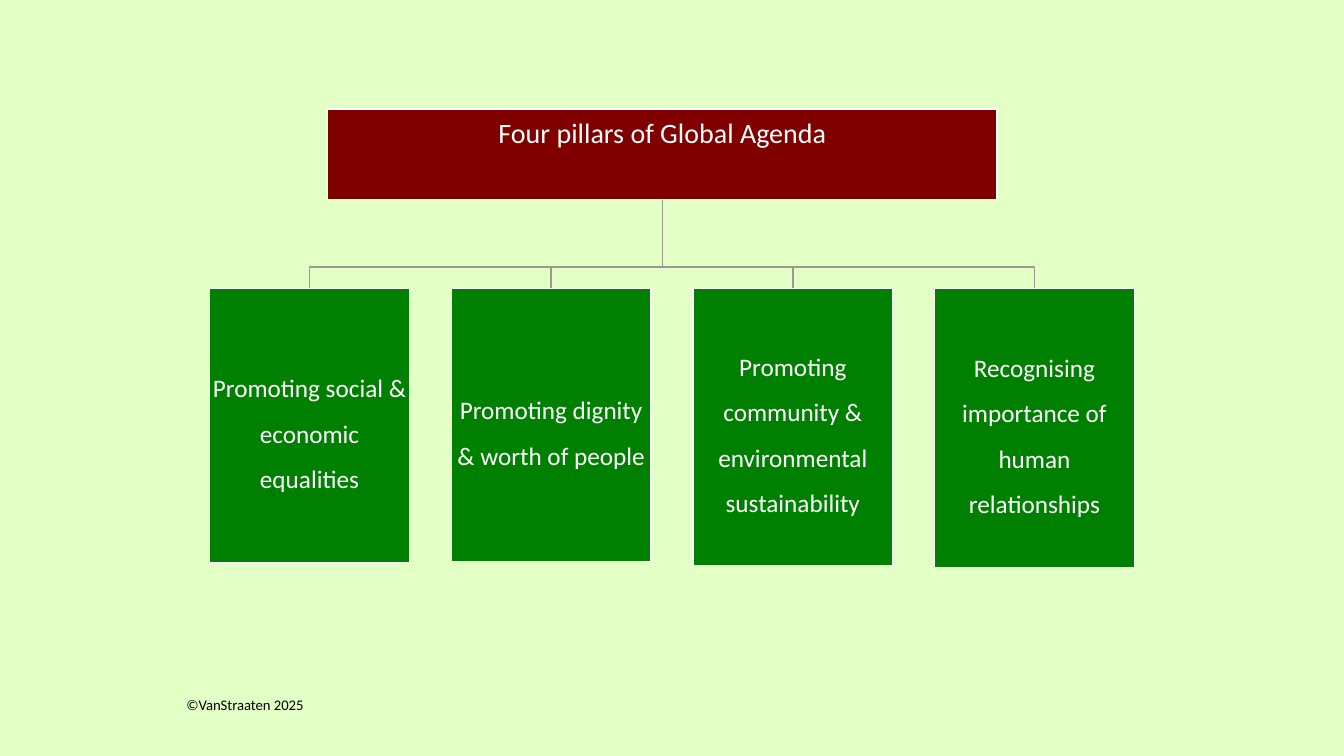
"""Build a slide showing the four pillars of the Global Agenda as a tree."""
import pptx
import pptx.dml.color
import pptx.enum.text
import pptx.util

Inches = pptx.util.Inches
Pt = pptx.util.Pt
RGBColor = pptx.dml.color.RGBColor
PP_ALIGN = pptx.enum.text.PP_ALIGN
MSO_ANCHOR = pptx.enum.text.MSO_ANCHOR

MINT = RGBColor(0xE2, 0xFF, 0xC6)
MAROON = RGBColor(0x80, 0x00, 0x00)
GREEN = RGBColor(0x00, 0x80, 0x00)
TAUPE = RGBColor(0xA0, 0x98, 0x8C)
WHITE = RGBColor(0xFF, 0xFF, 0xFF)
BLACK = RGBColor(0x00, 0x00, 0x00)

PILLARS = [
    ("Promoting social & economic equalities", 2.72),
    ("Promoting dignity & worth of people", 2.71),
    ("Promoting community & environmental sustainability", 2.75),
    ("Recognising importance of human relationships", 2.77),
]
LEFT, TOP, WIDTH = 2.08, 2.86, 1.98
PITCH = (9.27 - LEFT) / 3
TRUNK_X, TRUNK_TOP, BRANCH_Y = 6.57, 1.98, 2.65


def set_text(sp, text, size, color, align, spacing):
    tf = sp.text_frame
    tf.text = text
    tf.word_wrap = True
    tf.auto_size = pptx.enum.text.MSO_AUTO_SIZE.NONE
    tf.vertical_anchor = MSO_ANCHOR.MIDDLE
    p = tf.paragraphs[0]
    p.alignment = align
    p.line_spacing = spacing
    p.font.name = "Calibri"
    p.font.size = Pt(size)
    p.font.color.rgb = color
    return tf


def style_box(sp, text, fill, size, spacing):
    sp.fill.solid()
    sp.fill.fore_color.rgb = fill
    sp.line.color.rgb = WHITE
    sp.line.width = Pt(1)
    tf = set_text(sp, text, size, WHITE, PP_ALIGN.CENTER, spacing)
    tf.margin_left = tf.margin_right = Inches(0.01)
    tf.margin_top = tf.margin_bottom = Inches(0.01)
    return tf


prs = pptx.Presentation()
prs.slide_width = Inches(13.33)
prs.slide_height = Inches(7.5)
s = prs.slides.add_slide(prs.slide_layouts[5])
s.background.fill.solid()
s.background.fill.fore_color.rgb = MINT

title = s.shapes.title
title.left, title.top = Inches(3.25), Inches(1.08)
title.width, title.height = Inches(6.64), Inches(0.9)
tf = style_box(title, "Four pillars of Global Agenda", MAROON, 20, 0.9)
tf.vertical_anchor = MSO_ANCHOR.TOP
tf.margin_top = Inches(0.1)

for i, (text, height) in enumerate(PILLARS):
    left = LEFT + i * PITCH
    center = left + WIDTH / 2
    builder = s.shapes.build_freeform(Inches(TRUNK_X), Inches(TRUNK_TOP))
    corners = [(TRUNK_X, BRANCH_Y), (center, BRANCH_Y), (center, TOP)]
    builder.add_line_segments([(Inches(x), Inches(y)) for x, y in corners], close=False)
    branch = builder.convert_to_shape()
    branch.shadow.inherit = False
    branch.fill.background()
    branch.line.color.rgb = TAUPE
    branch.line.width = Pt(1)

    box = s.shapes.add_shape(
        pptx.enum.shapes.MSO_SHAPE.RECTANGLE,
        Inches(left), Inches(TOP), Inches(WIDTH), Inches(height))
    box.shadow.inherit = False
    style_box(box, text, GREEN, 18, 1.5)

credit = s.shapes.add_textbox(Inches(1.75), Inches(6.82), Inches(6.45), Inches(0.35))
set_text(credit, "©VanStraaten 2025", 10.5, BLACK, PP_ALIGN.LEFT, 1.0)

prs.save("out.pptx")
